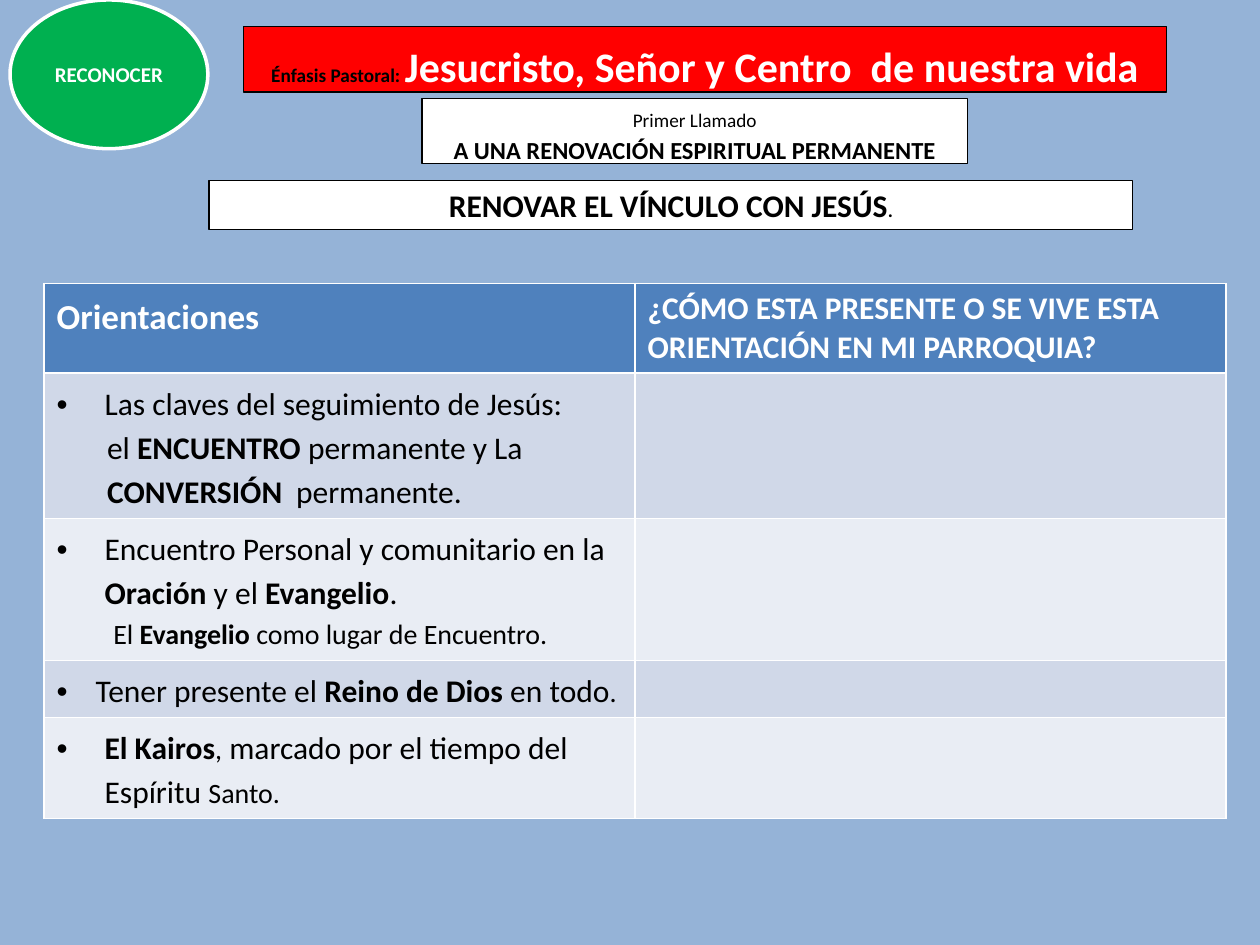
import pptx
import pptx.dml.color
import pptx.enum.shapes
import pptx.enum.text
import pptx.oxml.ns
import pptx.util
from lxml import etree
from pptx.util import Inches

RGBColor = pptx.dml.color.RGBColor
SHAPES = pptx.enum.shapes.MSO_SHAPE
ANCHOR = pptx.enum.text.MSO_ANCHOR
ALIGN = pptx.enum.text.PP_ALIGN

SKY = RGBColor(0x95, 0xB3, 0xD7)
GREEN = RGBColor(0x00, 0xB0, 0x50)
RED = RGBColor(0xFF, 0x00, 0x00)
WHITE = RGBColor(0xFF, 0xFF, 0xFF)
BLACK = RGBColor(0x00, 0x00, 0x00)
HEADER_BLUE = RGBColor(0x4F, 0x81, 0xBD)
BANDS = (RGBColor(0xD0, 0xD8, 0xE8), RGBColor(0xE9, 0xED, 0xF4))

FONT = "Calibri"
LOOSE = 1.15

GUIDELINES = [
    [
        (0.38, True, [("Las claves del seguimiento de Jesús:", 18, False)]),
        (0.4, False, [("el ", 18, False), ("ENCUENTRO", 18, True),
                      (" permanente y La ", 18, False), ("CONVERSIÓN", 18, True),
                      ("\tpermanente.", 18, False)]),
    ],
    [
        (0.38, True, [("Encuentro Personal y comunitario en la ", 18, False),
                      ("Oración", 18, True), (" y el ", 18, False),
                      ("Evangelio", 18, True), (".", 18, False)]),
        (0.45, False, [("El ", 16, False), ("Evangelio", 16, True),
                       (" como lugar de Encuentro.", 16, False)]),
    ],
    [
        (0.31, True, [("Tener presente el ", 18, False), ("Reino de Dios", 18, True),
                      (" en todo", 18, False), (".", 16, False)]),
    ],
    [
        (0.38, True, [("El Kairos", 18, True), (",", 16, False),
                      (" marcado por el tiempo del Espíritu ", 18, False),
                      ("Santo.", 16, False)]),
    ],
]


def add_run(paragraph, text, size, bold, color=BLACK):
    run = paragraph.add_run()
    run.text = text
    run.font.name = FONT
    run.font.size = pptx.util.Pt(size)
    run.font.bold = bold
    run.font.color.rgb = color


def next_paragraph(frame, index):
    return frame.add_paragraph() if index else frame.paragraphs[0]


def style_panel(panel, fill, line, width, anchor, lines, spacing=None):
    panel.fill.solid()
    panel.fill.fore_color.rgb = fill
    panel.line.color.rgb = line
    panel.line.width = pptx.util.Pt(width)
    panel.shadow.inherit = False
    frame = panel.text_frame
    frame.word_wrap = True
    frame.auto_size = pptx.enum.text.MSO_AUTO_SIZE.NONE
    frame.vertical_anchor = anchor
    for index, runs in enumerate(lines):
        paragraph = next_paragraph(frame, index)
        paragraph.alignment = ALIGN.CENTER
        if spacing:
            paragraph.line_spacing = spacing
        for run in runs:
            add_run(paragraph, *run)


def add_step_badge(slide, box):
    badge = slide.shapes.add_shape(SHAPES.OVAL, *map(Inches, box))
    style_panel(badge, GREEN, WHITE, 2, ANCHOR.MIDDLE,
                [[("RECONOCER", 12, True, WHITE)]])


def place_emphasis_title(slide, box):
    title = slide.shapes.title
    title.left, title.top, title.width, title.height = map(Inches, box)
    style_panel(title, RED, BLACK, 0.75, ANCHOR.TOP,
                [[("Énfasis Pastoral: ", 11, True),
                  ("Jesucristo, Señor y Centro  de nuestra vida", 24, True, WHITE)]],
                LOOSE)


def add_white_panel(slide, box, lines, spacing=None):
    panel = slide.shapes.add_shape(SHAPES.RECTANGLE, *map(Inches, box))
    style_panel(panel, WHITE, BLACK, 0.75, ANCHOR.TOP, lines, spacing)


def format_guideline(paragraph, indent, bulleted):
    properties = paragraph._p.get_or_add_pPr()
    properties.set("marL", str(Inches(indent)))
    properties.set("indent", str(-Inches(indent) if bulleted else 0))
    paragraph.line_spacing = LOOSE
    qn = pptx.oxml.ns.qn
    if bulleted:
        etree.SubElement(properties, qn("a:buFont"), typeface="Arial")
        etree.SubElement(properties, qn("a:buChar"), char="•")
    else:
        stops = etree.SubElement(properties, qn("a:tabLst"))
        etree.SubElement(stops, qn("a:tab"), pos=str(Inches(2.3)), algn="l")


def add_guidelines_table(slide, box, row_heights):
    table = slide.shapes.add_table(len(row_heights), 2, *map(Inches, box)).table
    for row, height in zip(table.rows, row_heights):
        row.height = Inches(height)
    for row_index in range(len(row_heights)):
        fill = BANDS[(row_index - 1) % 2] if row_index else HEADER_BLUE
        for column_index in range(2):
            cell = table.cell(row_index, column_index)
            cell.fill.solid()
            cell.fill.fore_color.rgb = fill

    topic = table.cell(0, 0).text_frame.paragraphs[0]
    topic.line_spacing = LOOSE
    add_run(topic, "Orientaciones", 20, True, WHITE)
    question = table.cell(0, 1).text_frame.paragraphs[0]
    add_run(question, "¿CÓMO ESTA PRESENTE O SE VIVE ESTA ORIENTACIÓN EN MI PARROQUIA?",
            18, True, WHITE)

    for row_index, guideline in enumerate(GUIDELINES, start=1):
        frame = table.cell(row_index, 0).text_frame
        for index, (indent, bulleted, runs) in enumerate(guideline):
            paragraph = next_paragraph(frame, index)
            format_guideline(paragraph, indent, bulleted)
            for run in runs:
                add_run(paragraph, *run)


def main():
    presentation = pptx.Presentation()
    presentation.slide_width = Inches(10)
    presentation.slide_height = Inches(7.5)
    slide = presentation.slides.add_slide(presentation.slide_layouts[5])
    slide.background.fill.solid()
    slide.background.fill.fore_color.rgb = SKY

    add_step_badge(slide, (0.08, 0, 1.57, 1.18))
    place_emphasis_title(slide, (1.93, 0.21, 7.33, 0.52))
    add_white_panel(slide, (1.66, 1.43, 7.33, 0.39),
                    [[("RENOVAR EL VÍNCULO CON JESÚS", 18, True), (".", 11, True)]])
    add_white_panel(slide, (3.35, 0.78, 4.33, 0.52),
                    [[("Primer Llamado", 11, False)],
                     [("A UNA RENOVACIÓN ESPIRITUAL PERMANENTE", 14, True)]], LOOSE)
    add_guidelines_table(slide, (0.35, 2.25, 9.38, 4.18),
                         (0.69, 1.13, 1.13, 0.44, 0.79))
    presentation.save("out.pptx")


if __name__ == "__main__":
    main()
